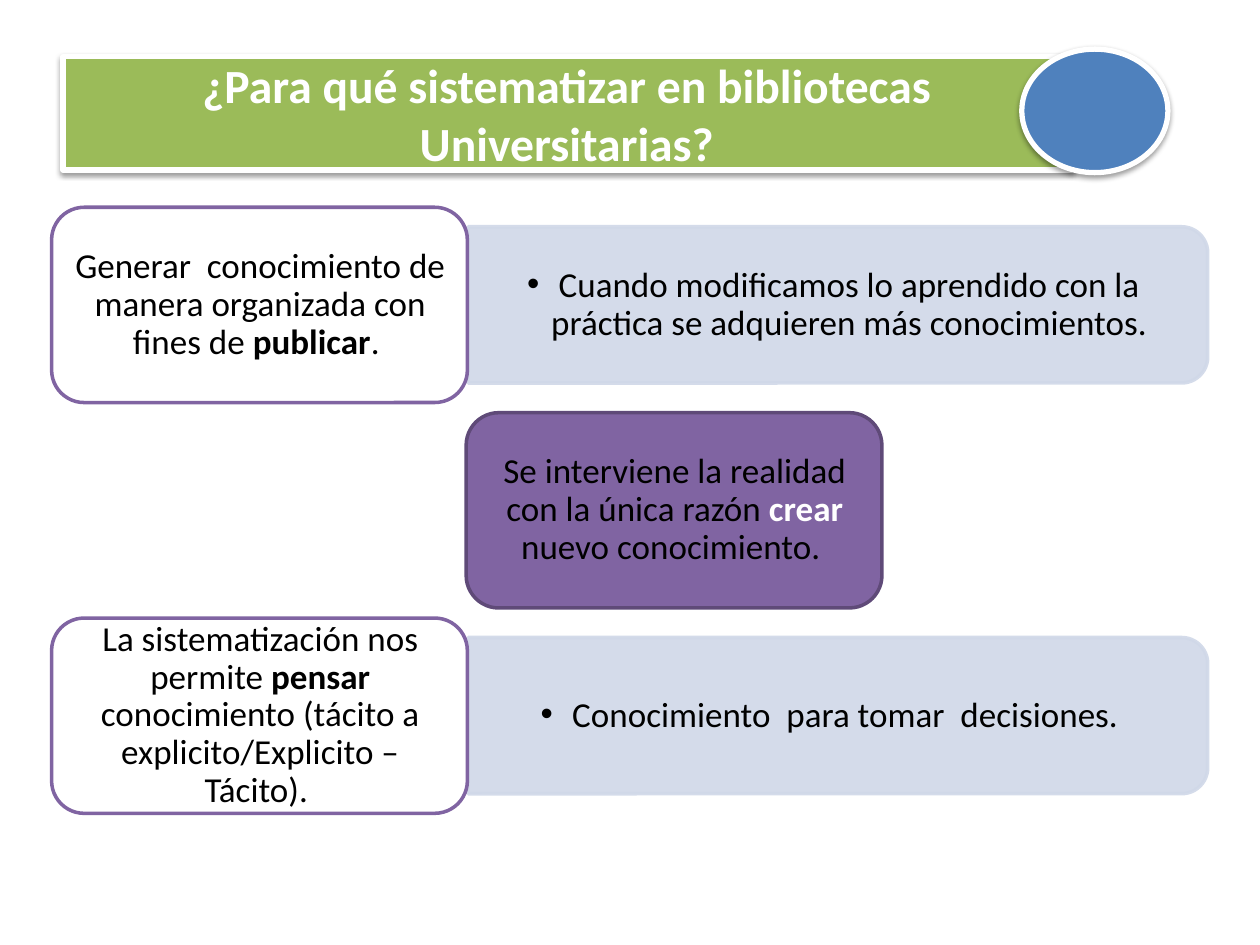
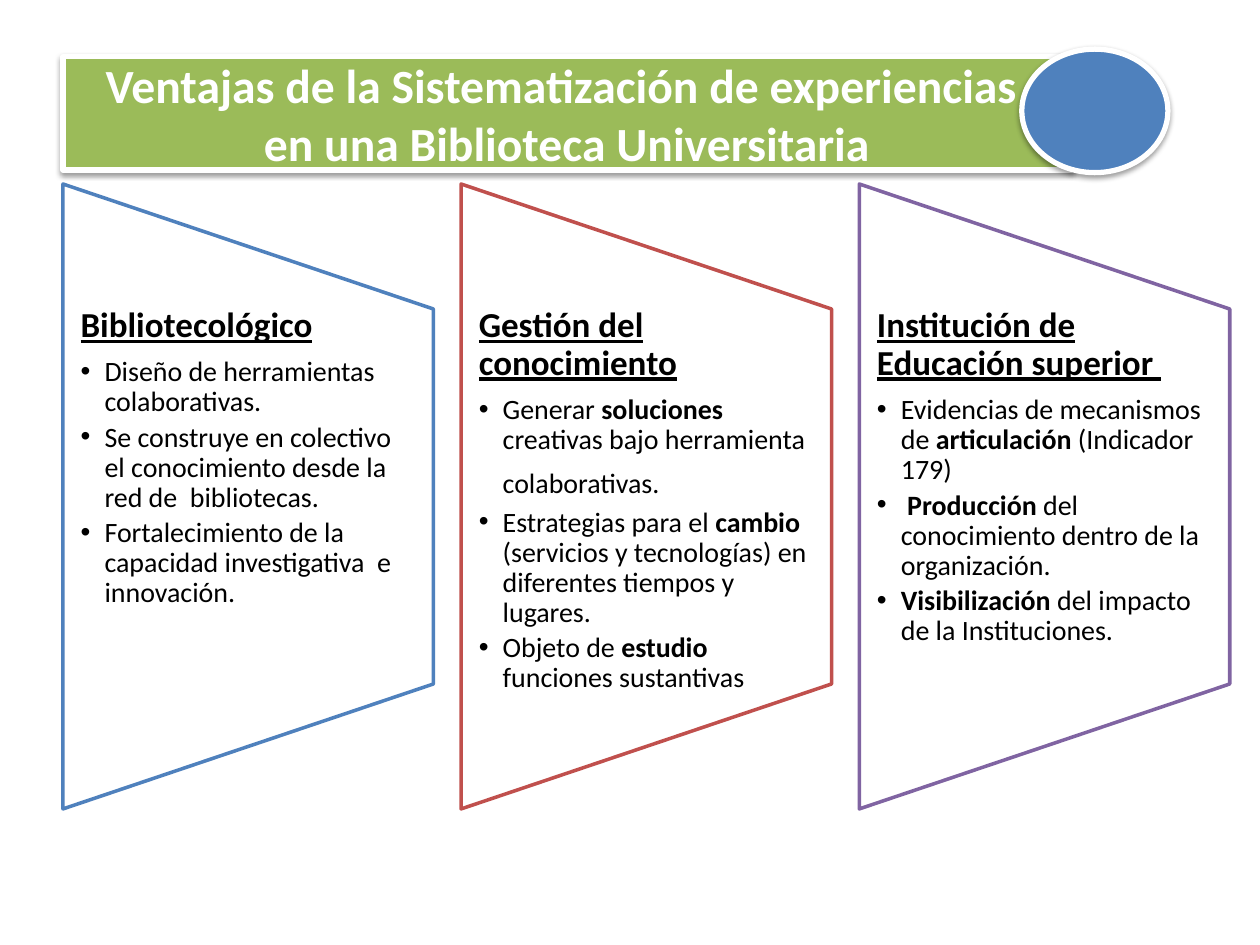
from pptx import Presentation
from pptx import util as u
from pptx.dml.color import RGBColor
from pptx.enum import shapes, text
from pptx.oxml import ns
from lxml import etree

FONT = "Calibri"
BLACK = RGBColor(0x00, 0x00, 0x00)
WHITE = RGBColor(0xFF, 0xFF, 0xFF)
GREEN = RGBColor(0x9B, 0xBB, 0x59)
BLUE = RGBColor(0x4F, 0x81, 0xBD)
RED = RGBColor(0xC0, 0x50, 0x4D)
PURPLE = RGBColor(0x80, 0x64, 0xA2)
DARK_PURPLE = RGBColor(0x5F, 0x4A, 0x78)
PALE_BLUE = RGBColor(0xD0, 0xD8, 0xE8)

# Cards: text with **strong** words, fill, line, strong colour, side note
REASONS = [
    ("Generar  conocimiento de manera organizada con fines de **publicar**. ",
     WHITE, PURPLE, BLACK,
     "Cuando modificamos lo aprendido con la práctica se adquieren más conocimientos."),
    ("Se interviene la realidad con la única razón **crear **nuevo conocimiento. ",
     PURPLE, DARK_PURPLE, WHITE, None),
    ("La sistematización nos permite **pensar** conocimiento "
     "(tácito a explicito/Explicito –Tácito). ",
     WHITE, PURPLE, BLACK, "Conocimiento  para tomar  decisiones. "),
]

ADVANTAGES = [
    ("Bibliotecológico", BLUE, [
        "Diseño de herramientas colaborativas.",
        "Se construye en colectivo el conocimiento desde la red de  bibliotecas.",
        "Fortalecimiento de la capacidad investigativa  e innovación."]),
    ("Gestión del conocimiento", RED, [
        "Generar **soluciones** creativas bajo herramienta colaborativas.",
        "Estrategias para el **cambio** (servicios y tecnologías) en diferentes "
        "tiempos y lugares.",
        "Objeto de **estudio** funciones sustantivas"]),
    ("Institución de Educación superior ", PURPLE, [
        "Evidencias de mecanismos de **articulación** (Indicador 179)",
        " **Producción** del conocimiento dentro de la organización.",
        "**Visibilización** del impacto de la Instituciones."]),
]


def style_shape(shape, fill, line, weight=2):
    shape.shadow.inherit = False
    shape.fill.solid()
    shape.fill.fore_color.rgb = fill
    shape.line.color.rgb = line
    shape.line.width = u.Pt(weight)


def set_alpha(color, percent):
    etree.SubElement(color, ns.qn("a:alpha"), val=str(percent * 1000))


def add_shadow(shape):
    effects = shape._element.spPr.find(ns.qn("a:effectLst"))
    shadow = etree.SubElement(effects, ns.qn("a:outerShdw"),
                              blurRad=str(u.Pt(3.1)), dist=str(u.Pt(1.6)),
                              dir="5400000", rotWithShape="0")
    set_alpha(etree.SubElement(shadow, ns.qn("a:srgbClr"), val="000000"), 38)


def add_centred(slide, kind, center_x, center_y, width, height, rotation=0):
    shape = slide.shapes.add_shape(
        kind, u.Inches(center_x - width / 2), u.Inches(center_y - height / 2),
        u.Inches(width), u.Inches(height))
    shape.rotation = rotation
    return shape


def add_text_box(slide, left, top, width, height, inset_x, inset_y,
                 anchor=text.MSO_ANCHOR.MIDDLE):
    box = slide.shapes.add_textbox(u.Inches(left), u.Inches(top),
                                   u.Inches(width), u.Inches(height))
    frame = box.text_frame
    frame.word_wrap = True
    frame.vertical_anchor = anchor
    frame.margin_left = frame.margin_right = u.Inches(inset_x)
    frame.margin_top = frame.margin_bottom = u.Inches(inset_y)
    return frame


def add_bullet(para, indent):
    para.level = 1
    props = para._p.get_or_add_pPr()
    props.set("marL", str(u.Inches(indent)))
    props.set("indent", str(-u.Inches(indent)))
    etree.SubElement(props, ns.qn("a:buFont"), typeface="Arial")
    etree.SubElement(props, ns.qn("a:buChar"), char="•")


def add_span(para, words, size, color=BLACK, bold=False):
    span = para.add_run()
    span.text = words
    span.font.name = FONT
    span.font.size = u.Pt(size)
    span.font.color.rgb = color
    span.font.bold = bold
    return span


def write_marked(para, marked, size, strong_color=BLACK):
    """Write the text; words between ** marks are bold."""
    para.line_spacing = 0.9
    for index, words in enumerate(marked.split("**")):
        strong = index % 2 == 1
        if words:
            add_span(para, words, size, strong_color if strong else BLACK, strong)


def add_header(slide, lines):
    # Green title band
    title = slide.shapes.title
    title.left, title.top = u.Inches(0.5), u.Inches(0.45)
    title.width, title.height = u.Inches(8), u.Inches(0.9)
    style_shape(title, GREEN, WHITE, 3)
    add_shadow(title)
    frame = title.text_frame
    frame.text = "\n".join(lines)
    frame.word_wrap = True
    frame.auto_size = text.MSO_AUTO_SIZE.NONE
    frame.vertical_anchor = text.MSO_ANCHOR.MIDDLE
    for para in frame.paragraphs:
        para.alignment = text.PP_ALIGN.CENTER
        for span in para.runs:
            span.font.name = FONT
            span.font.size = u.Pt(27.2)
            span.font.bold = True
            span.font.color.rgb = WHITE
    # Blue disc at the end of the band
    disc = add_centred(slide, shapes.MSO_SHAPE.OVAL, 8.69, 0.88, 1.16, 0.98)
    style_shape(disc, BLUE, WHITE, 3)
    add_shadow(disc)


def add_side_note(slide, center_y, note):
    band = add_centred(slide, shapes.MSO_SHAPE.ROUND_2_SAME_RECTANGLE,
                       6.65, center_y, 1.24, 5.87, 90)
    style_shape(band, PALE_BLUE, PALE_BLUE)
    for color in band._element.spPr.iter(ns.qn("a:srgbClr")):
        set_alpha(color, 90)
    frame = add_text_box(slide, 3.71, center_y - 0.56, 5.81, 1.12, 0.27, 0.14)
    para = frame.paragraphs[0]
    add_bullet(para, 0.25)
    para.alignment = text.PP_ALIGN.CENTER
    write_marked(para, note, 20)


def add_reason(slide, left, center_y, words, fill, line, strong_color):
    card = add_centred(slide, shapes.MSO_SHAPE.ROUNDED_RECTANGLE,
                       left + 1.65, center_y, 3.3, 1.55)
    style_shape(card, fill, line)
    frame = add_text_box(slide, left + 0.08, center_y - 0.7, 3.15, 1.4, 0.08, 0.04)
    para = frame.paragraphs[0]
    para.alignment = text.PP_ALIGN.CENTER
    write_marked(para, words, 20, strong_color)


def add_advantage(slide, left, heading, color, points):
    panel = add_centred(slide, shapes.MSO_SHAPE.FLOWCHART_MANUAL_OPERATION,
                        left + 1.47, 3.94, 4.96, 2.94, 270)
    style_shape(panel, WHITE, color)
    frame = add_text_box(slide, left, 2.44, 2.94, 2.98, 0.14, 0,
                         text.MSO_ANCHOR.TOP)
    para = frame.paragraphs[0]
    para.line_spacing = 0.9
    para.space_after = u.Pt(7)
    add_span(para, heading, 20, bold=True).font.underline = True
    for point in points:
        para = frame.add_paragraph()
        add_bullet(para, 0.19)
        para.space_after = u.Pt(2.8)
        write_marked(para, point, 16)
    return frame


def main():
    deck = Presentation()
    deck.slide_width, deck.slide_height = u.Inches(10), u.Inches(7.5)
    title_only = deck.slide_layouts[5]

    # Reasons to systematise
    page = deck.slides.add_slide(title_only)
    for row, (words, fill, line, strong_color, note) in enumerate(REASONS):
        center_y = 2.42 + 1.63 * row
        if note:
            add_side_note(page, center_y, note)
        add_reason(page, 0.41 if note else 3.7, center_y,
                   words, fill, line, strong_color)
    add_header(page, ["¿Para qué sistematizar en bibliotecas Universitarias?"])

    # Advantages in three columns
    page = deck.slides.add_slide(title_only)
    frames = [add_advantage(page, 0.5 + 3.16 * column, *advantage)
              for column, advantage in enumerate(ADVANTAGES)]
    # A large closing space makes this line taller
    add_span(frames[1].paragraphs[1], " ", 25)
    add_header(page, ["Ventajas de la Sistematización de experiencias ",
                      "en una Biblioteca Universitaria"])

    deck.save("out.pptx")


if __name__ == "__main__":
    main()
